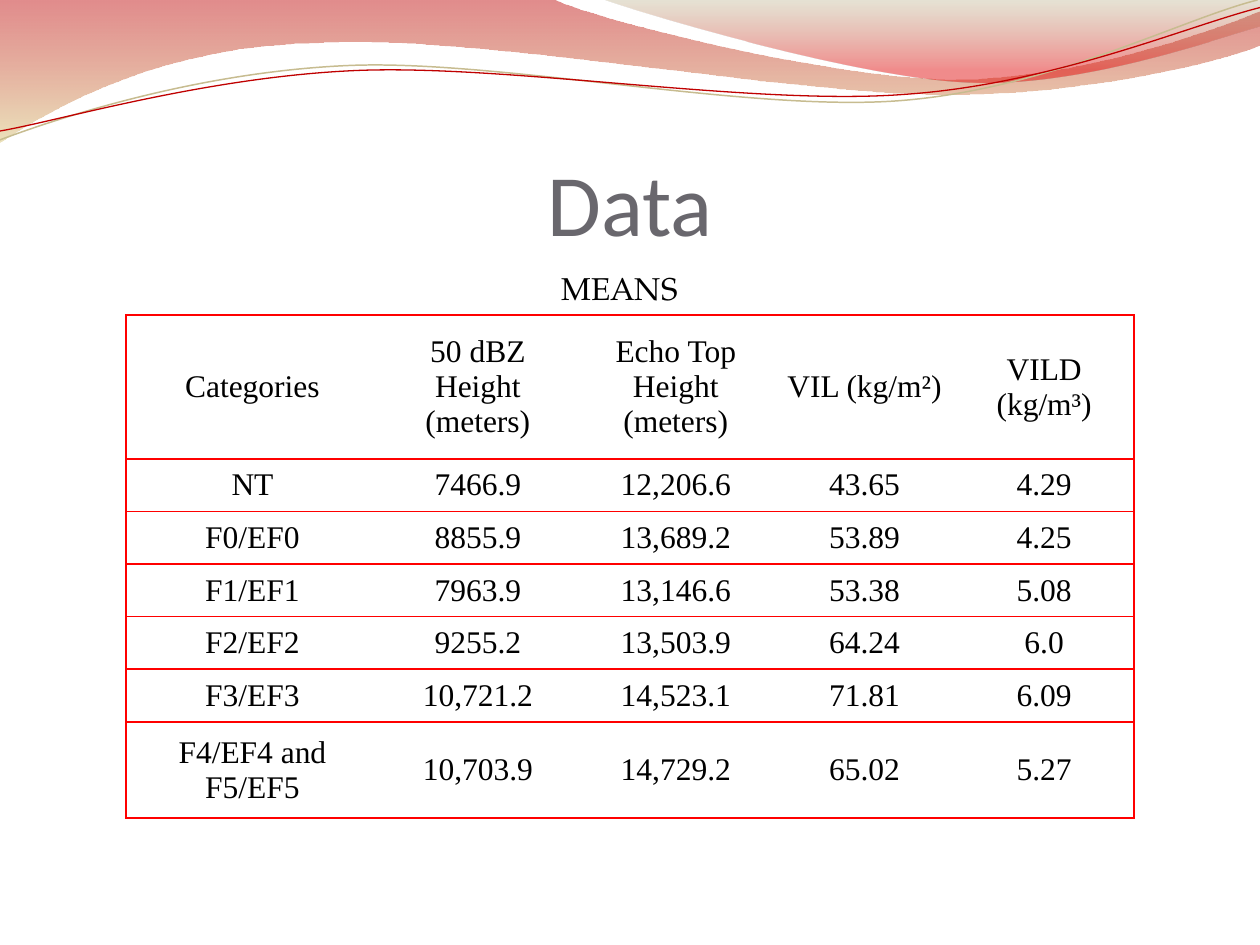
"""Build the Data slide: a wavy header, a title and a table of category means."""
from lxml.etree import SubElement
from pptx import Presentation
from pptx.dml.color import RGBColor
from pptx.enum.text import MSO_ANCHOR as Anchor, PP_ALIGN as Align
from pptx.oxml.ns import qn
from pptx.util import Cm, Pt

COLORS = {
    "white": "FFFFFF", "black": "000000", "title": "69676D", "border": "FF0000",
    "crimson": "BD0000", "sand": "DCCB84", "olive": "ADA272", "red": "E10000",
    "tan": "C7BC90", "dark red": "C00000",
}
INCH = 2.54
PLAIN_TABLE_STYLE = "{2D5ABB26-0587-4C30-8999-92F81FD0307C}"


def write_text(frame, text, font="Times New Roman", size=18, color="black", anchor=Anchor.MIDDLE):
    frame.word_wrap = True
    frame.vertical_anchor = anchor
    paragraph = frame.paragraphs[0]
    paragraph.alignment = Align.CENTER
    run = paragraph.add_run()
    run.text = text
    run.font.name = font
    run.font.size = Pt(size)
    run.font.bold = False
    run.font.color.rgb = RGBColor.from_string(COLORS[color])


def add_wave(shapes, segments, closed):
    points = [(Cm(x * INCH), Cm(y * INCH))
              for segment in segments for x, y in zip(segment[::2], segment[1::2])]
    builder = shapes.build_freeform(*points[0])
    builder.add_line_segments(points[1:], close=closed)
    shape = builder.convert_to_shape()
    shape.shadow.inherit = False
    outline = next(shape._element.spPr.iter(qn("a:path")))
    lines = iter(outline.findall(qn("a:lnTo")))
    for segment in segments[1:]:
        line = next(lines)
        if len(segment) == 6:
            line.tag = qn("a:cubicBezTo")
            for extra in (next(lines), next(lines)):
                line.append(extra[0])
                outline.remove(extra)
    return shape


presentation = Presentation()
presentation.slide_width = Cm(25.4)
presentation.slide_height = Cm(19.05)
slide = presentation.slides.add_slide(presentation.slide_layouts[5])
shapes = slide.shapes

bands = [
    ([(0, 0), (4.4, 0), (4.76, 0.17, 6.64, 0.63, 7.58, 0.63), (8.53, 0.63, 9.58, 0.26, 10, 0.09),
      (10, 0.36), (9.83, 0.44, 8.7, 0.76, 7.46, 0.75), (6.22, 0.75, 3.82, 0.28, 2.57, 0.34),
      (1.29, 0.36, 0.46, 0.83, 0, 1.13)],
     [(0, "crimson", 45), (1, "sand", 55)]),
    ([(4.79, 0), (5.09, 0.11, 6.82, 0.62, 7.69, 0.65), (8.56, 0.69, 9.61, 0.32, 10, 0.21), (10, 0)],
     [(0, "olive", 30), (0.8, "red", 45)]),
]
for segments, stops in bands:
    band = add_wave(shapes, segments, True)
    band.line.fill.background()
    band.fill.gradient()
    band.fill.gradient_angle = 270
    for stop, (position, color, _) in zip(band.fill.gradient_stops, stops):
        stop.position = position
        stop.color.rgb = RGBColor.from_string(COLORS[color])
    for node, (_, _, opacity) in zip(band._element.spPr.iter(qn("a:srgbClr")), stops):
        SubElement(node, qn("a:alpha"), val=str(opacity * 1000))

strands = [
    ("tan", 0.85, [(0, 1.11), (0.48, 0.93, 1.58, 0.57, 2.77, 0.52), (3.95, 0.47, 5.93, 0.89, 7.13, 0.8),
                   (8.33, 0.71, 9.38, 0.15, 9.98, 0)]),
    ("dark red", 0.75, [(0, 1.04), (0.47, 0.96, 1.64, 0.61, 2.83, 0.56), (4.03, 0.51, 5.97, 0.84, 7.17, 0.75),
                        (8.36, 0.67, 9.41, 0.21, 10, 0.06)]),
]
for color, width, segments in strands:
    strand = add_wave(shapes, segments, False)
    strand.fill.background()
    strand.line.color.rgb = RGBColor.from_string(COLORS[color])
    strand.line.width = Pt(width)

title = shapes.title
shapes._spTree.append(title._element)
title.left, title.top, title.width, title.height = Cm(1.27), Cm(1.95), Cm(22.86), Cm(3.17)
title_frame = title.text_frame
title_frame.margin_left = title_frame.margin_right = title_frame.margin_bottom = 0
title_frame.margin_top = Cm(0.13)
write_text(title_frame, "Data", font="Calibri", size=50, color="title", anchor=Anchor.BOTTOM)

rows = [
    ["Categories", "50 dBZ Height (meters)", "Echo Top Height (meters)", "VIL (kg/m²)", "VILD (kg/m³)"],
    ["NT", "7466.9", "12,206.6", "43.65", "4.29"],
    ["F0/EF0", "8855.9", "13,689.2", "53.89", "4.25"],
    ["F1/EF1", "7963.9", "13,146.6", "53.38", "5.08"],
    ["F2/EF2", "9255.2", "13,503.9", "64.24", "6.0"],
    ["F3/EF3", "10,721.2", "14,523.1", "71.81", "6.09"],
    ["F4/EF4 and F5/EF5", "10,703.9", "14,729.2", "65.02", "5.27"],
]
column_widths = [5.1, 3.99, 3.99, 3.62, 3.62]
row_heights = [2.9] + [1.06] * 5 + [1.94]
table = shapes.add_table(len(rows), len(column_widths), Cm(2.54), Cm(6.35),
                         Cm(sum(column_widths)), Cm(sum(row_heights))).table
table.first_row = table.horz_banding = False
next(table._tbl.iter(qn("a:tableStyleId"))).text = PLAIN_TABLE_STYLE
for column, width in zip(table.columns, column_widths):
    column.width = Cm(width)
for row, height in zip(table.rows, row_heights):
    row.height = Cm(height)
for row_index, values in enumerate(rows):
    for column_index, value in enumerate(values):
        cell = table.cell(row_index, column_index)
        cell.margin_left = cell.margin_right = Cm(0.18)
        cell.margin_top = cell.margin_bottom = 0
        cell.vertical_anchor = Anchor.MIDDLE
        write_text(cell.text_frame, value)
        sides = {0: "LTB", len(values) - 1: "RTB"}.get(column_index, "TB")
        for side in sides:
            border = SubElement(cell._tc.get_or_add_tcPr(), qn(f"a:ln{side}"), w=str(Pt(1)))
            SubElement(SubElement(border, qn("a:solidFill")), qn("a:srgbClr"), val=COLORS["border"])
        cell.fill.solid()
        cell.fill.fore_color.rgb = RGBColor.from_string(COLORS["white"])

caption = shapes.add_textbox(Cm(2.33), Cm(5.3), Cm(20.32), Cm(1.02))
write_text(caption.text_frame, "MEANS", font="TeX Gyre Pagella", anchor=Anchor.TOP)

presentation.save("out.pptx")
